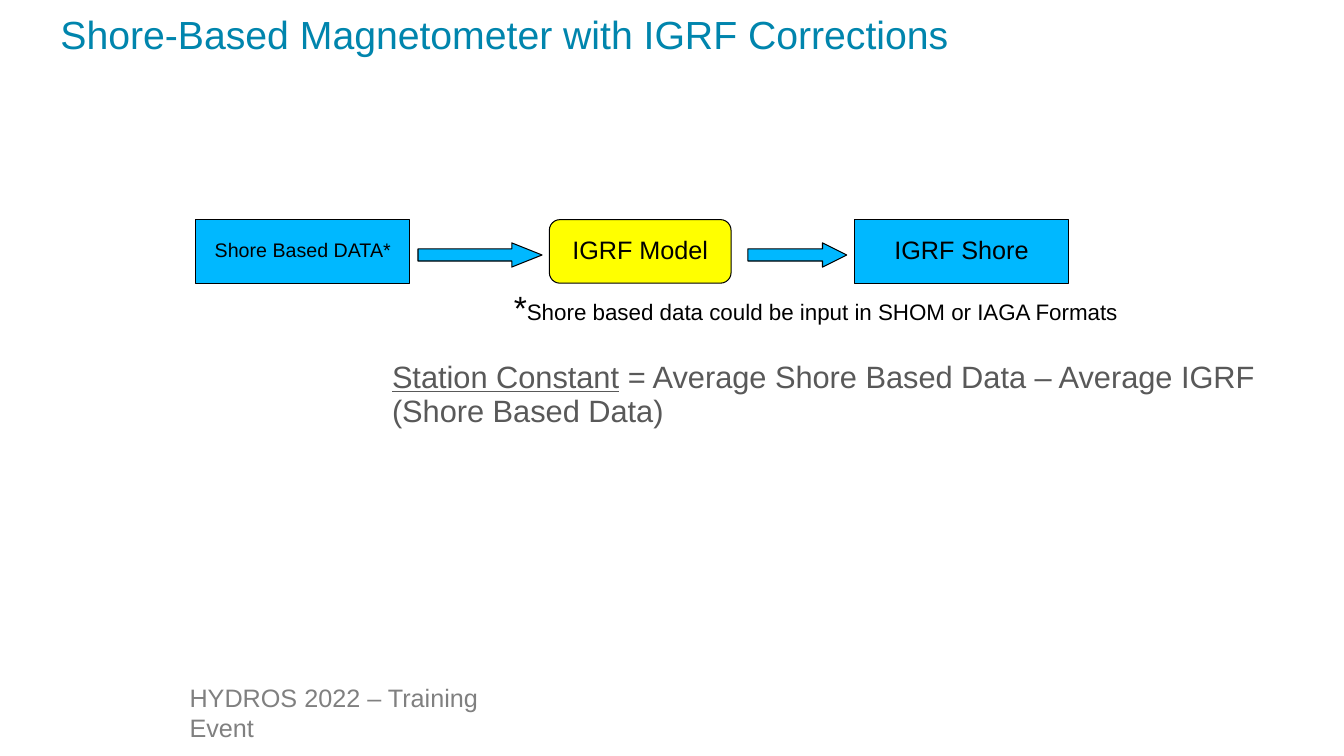
"""Build the slide on shore-based magnetometer data with IGRF corrections."""
from pptx import Presentation
from pptx.dml.color import RGBColor
from pptx.enum.shapes import MSO_SHAPE
from pptx.enum.text import MSO_ANCHOR, PP_ALIGN
from pptx.util import Pt


def rgb(value):
    return RGBColor.from_string(value)


def write(p, text, size=18, color="000000", align=PP_ALIGN.LEFT, spacing=0.92, underline=False):
    p.alignment = align
    p.line_spacing = spacing
    r = p.add_run()
    r.text = text
    r.font.name = "Arial"
    r.font.size = Pt(size)
    r.font.color.rgb = rgb(color)
    r.font.underline = underline


prs = Presentation()
prs.slide_width, prs.slide_height = Pt(960), Pt(540)
s = prs.slides.add_slide(prs.slide_layouts[5])

title = s.shapes.title
title.left, title.top, title.width, title.height = Pt(36), Pt(8.64), Pt(888), Pt(77.76)
title.text_frame.vertical_anchor = MSO_ANCHOR.TOP
write(title.text_frame.paragraphs[0], "Shore-Based Magnetometer with IGRF Corrections",
      size=28, color="0085AD", spacing=Pt(29))

BLUE, YELLOW = "00B8FF", "FFFF00"
flow = [
    (MSO_SHAPE.RECTANGLE, 139.9, 152.9, BLUE, "Shore Based DATA*", 14),
    (MSO_SHAPE.RIGHT_ARROW, 298.6, 88.6, BLUE, "", 1.25),
    (MSO_SHAPE.ROUNDED_RECTANGLE, 392.4, 129.8, YELLOW, "IGRF Model", 18),
    (MSO_SHAPE.RIGHT_ARROW, 534.2, 70.6, BLUE, "", 1),
    (MSO_SHAPE.RECTANGLE, 610.4, 152.9, BLUE, "IGRF Shore", 18),
]
for kind, left, width, fill, label, size in flow:
    top, height = (156.9, 45.4) if label else (173.5, 17.3)
    sp = s.shapes.add_shape(kind, Pt(left), Pt(top), Pt(width), Pt(height))
    sp.shadow.inherit = False
    sp.fill.solid()
    sp.fill.fore_color.rgb = rgb(fill)
    sp.line.color.rgb = rgb("000000")
    sp.line.width = Pt(0.75)
    if label:
        tf = sp.text_frame
        tf.word_wrap = False
        tf.vertical_anchor = MSO_ANCHOR.MIDDLE
        write(tf.paragraphs[0], label, size=size, align=PP_ALIGN.CENTER, spacing=0.93)
    else:
        sp.adjustments[1] = size

texts = [
    (367, 207.6, 450, 26, [
        ("*", {"size": 24}),
        ("Shore based data could be input in SHOM or IAGA Formats", {"size": 16})]),
    (280, 257.8, 672, 48, [
        ("Station Constant", {"size": 22, "color": "595959", "underline": True}),
        (" = Average Shore Based Data – Average IGRF (Shore Based Data)",
         {"size": 22, "color": "595959"})]),
    (135.4, 487.4, 256, 22, [
        ("HYDROS 2022 – Training Event", {"color": "808080", "spacing": 1})]),
]
for left, top, width, height, runs in texts:
    tf = s.shapes.add_textbox(Pt(left), Pt(top), Pt(width), Pt(height)).text_frame
    tf.word_wrap = True
    tf.margin_left = tf.margin_right = tf.margin_top = tf.margin_bottom = 0
    for text, style in runs:
        write(tf.paragraphs[0], text, **style)

prs.save("out.pptx")
